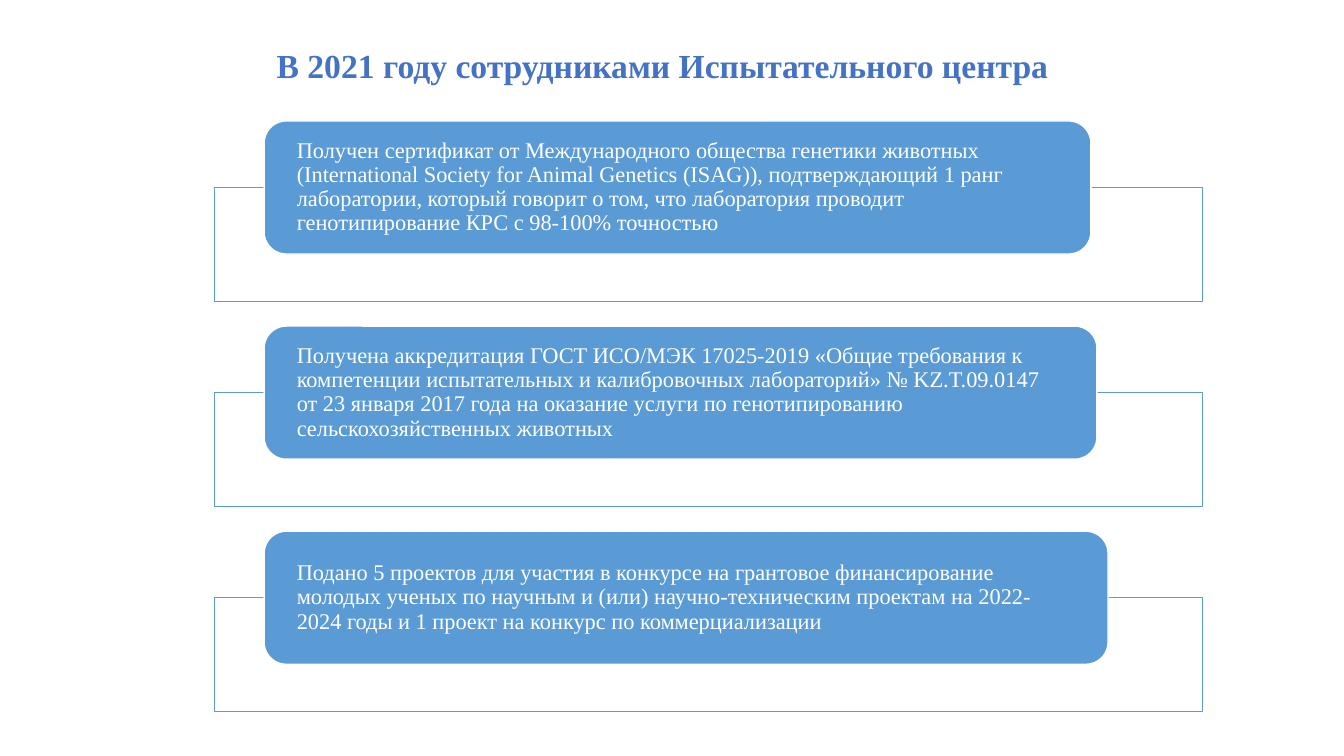
from pptx import Presentation
from pptx.dml.color import RGBColor
from pptx.enum.shapes import MSO_SHAPE as Shape
from pptx.enum.text import MSO_ANCHOR as Anchor, PP_ALIGN as Align
from pptx.oxml.ns import qn
from pptx.util import Inches, Pt
from lxml import etree

WHITE, BLUE, TITLE_BLUE = "FFFFFF", "5B9BD5", "4472C4"
ROW_STEP = 2.035
ACHIEVEMENTS = [
    (8.2, "Получен сертификат от Международного общества генетики животных "
          "(International Society for Animal Genetics (ISAG)), подтверждающий 1 ранг "
          "лаборатории, который говорит о том, что лаборатория проводит "
          "генотипирование КРС с 98-100% точностью"),
    (8.26, "Получена аккредитация ГОСТ ИСО/МЭК 17025-2019 «Общие требования к "
           "компетенции испытательных и калибровочных лабораторий» № KZ.T.09.0147 "
           "от 23 января 2017 года на оказание услуги по генотипированию "
           "сельскохозяйственных животных"),
    (8.37, "Подано 5 проектов для участия в конкурсе на грантовое финансирование "
           "молодых ученых по научным и (или) научно-техническим проектам на 2022-2024 "
           "годы и 1 проект на конкурс по коммерциализации"),
]


def color(value):
    return RGBColor.from_string(value)


class SlideBuilder:
    font = "Times New Roman"

    def __init__(self, page):
        self.page = page

    def shape(self, kind, left, top, width, height, fill, line, alpha=None):
        box = self.page.shapes.add_shape(
            kind, Inches(left), Inches(top), Inches(width), Inches(height))
        box.shadow.inherit = False
        box.fill.solid()
        box.fill.fore_color.rgb = color(fill)
        box.line.color.rgb = color(line)
        box.line.width = Pt(1)
        if alpha is not None:
            tone = box.element.spPr.find(qn("a:solidFill"))[0]
            etree.SubElement(tone, qn("a:alpha")).set("val", str(alpha * 1000))
        return box

    def set_text(self, box, text, size, tint, align, spacing, bold=False):
        frame = box.text_frame
        frame.word_wrap = True
        frame.text = text
        para = frame.paragraphs[0]
        para.alignment = align
        para.line_spacing = spacing
        font = para.runs[0].font
        font.name, font.size, font.bold = self.font, Pt(size), bold
        font.color.rgb = color(tint)

    def title(self, text, left, top, width, height):
        box = self.page.shapes.add_textbox(
            Inches(left), Inches(top), Inches(width), Inches(height))
        self.set_text(box, text, 24, TITLE_BLUE, Align.CENTER, 1.15, bold=True)
        box.text_frame.paragraphs[0].space_after = Pt(10)

    def achievement(self, text, top, width):
        # Outlined frame behind the rounded card
        self.shape(Shape.RECTANGLE, 2.13, top + 0.66, 9.8, 1.13, WHITE, BLUE, alpha=90)
        card = self.shape(Shape.ROUNDED_RECTANGLE, 2.62, top, width, 1.32, BLUE, WHITE)
        frame = card.text_frame
        frame.margin_left = frame.margin_right = Inches(0.26)
        frame.margin_top = frame.margin_bottom = 0
        frame.vertical_anchor = Anchor.MIDDLE
        self.set_text(card, text, 16, WHITE, Align.LEFT, 0.9)


def main():
    deck = Presentation()
    deck.slide_width, deck.slide_height = Inches(13.33), Inches(7.5)
    builder = SlideBuilder(deck.slides.add_slide(deck.slide_layouts[6]))

    # Achievement rows
    for row, (width, text) in enumerate(ACHIEVEMENTS):
        builder.achievement(text, 1.2 + row * ROW_STEP, width)

    # Heading
    builder.title("В 2021 году сотрудниками Испытательного центра", 0.77, 0.34, 11.6, 0.57)

    deck.save("out.pptx")


if __name__ == "__main__":
    main()
